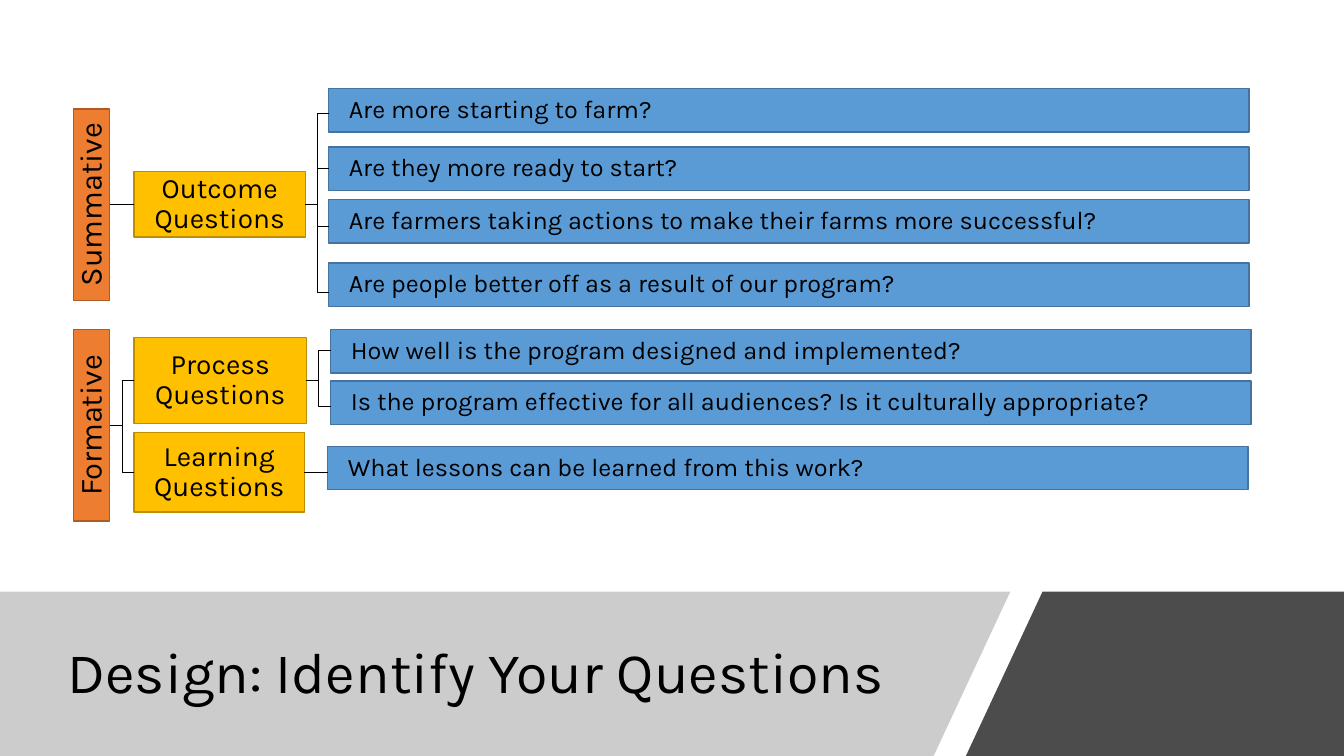
from lxml.etree import SubElement
from pptx import Presentation
from pptx.dml.color import RGBColor
from pptx.enum.shapes import MSO_CONNECTOR as Link, MSO_SHAPE as Shape
from pptx.enum.text import MSO_ANCHOR as Anchor, MSO_AUTO_SIZE as AutoSize, PP_ALIGN as Align
from pptx.oxml.ns import qn
from pptx.util import Inches, Pt

BLACK = RGBColor(0x00, 0x00, 0x00)
GREY = RGBColor(0x80, 0x80, 0x80)
ORANGE = RGBColor(0xED, 0x7D, 0x31)
DARK_ORANGE = RGBColor(0xAF, 0x5C, 0x24)
YELLOW = RGBColor(0xFF, 0xC0, 0x00)
DARK_YELLOW = RGBColor(0xBD, 0x8E, 0x00)
BLUE = RGBColor(0x5B, 0x9B, 0xD5)
DARK_BLUE = RGBColor(0x43, 0x73, 0x9E)

# Grid of square cells: 133.3 columns by 75 rows
CELL = Inches(0.1)
COLUMNS, ROWS = 133.3, 75
STAGE_LEFT, STAGE_WIDTH, STAGE_HEIGHT = 7.3, 3.6, 19
TYPE_LEFT = 13.3
QUESTION_WIDTH, QUESTION_HEIGHT = 91.3, 4.3
BAND_TOP = 58.7

# Stage: name, top, question types
# Type: name, top, width, height, left of its questions, questions
# Question: text, top, row where its link arrives
STAGES = [
    ("Summative", 10.8, [
        ("Outcome Questions", 17, 17, 6.5, 32.6, [
            ("Are more starting to farm?", 8.8, 11.3),
            ("Are they more ready to start?", 14.6, 16.7),
            ("Are farmers taking actions to make their farms more successful?", 19.8, 22.5),
            ("Are people better off as a result of our program?", 26.1, 29),
        ]),
    ]),
    ("Formative", 32.7, [
        ("Process Questions", 33.5, 17.1, 8.5, 32.8, [
            ("How well is the program designed and implemented?", 32.7, 34.8),
            ("Is the program effective for all audiences? Is it culturally appropriate?", 37.8, 40.3),
        ]),
        ("Learning Questions", 42.9, 16.9, 7.9, 32.5, [
            ("What lessons can be learned from this work?", 44.3, 46.8),
        ]),
    ]),
]


def cells(count):
    return round(count * CELL)


class QuestionSlide:
    """Draws on one slide; all lengths are given in grid cells."""

    font = "Karla"

    def __init__(self, deck):
        self.slide = deck.slides.add_slide(deck.slide_layouts[5])
        self.shapes = self.slide.shapes

    def style_text(self, frame, text, size, align, inset):
        frame.text = text
        frame.word_wrap = True
        frame.auto_size = AutoSize.NONE
        frame.vertical_anchor = Anchor.MIDDLE
        frame.margin_left = cells(inset[0])
        frame.margin_top = frame.margin_right = frame.margin_bottom = cells(inset[1])
        para = frame.paragraphs[0]
        para.alignment = align
        para.line_spacing = 0.9
        font = para.runs[0].font
        font.name, font.size = self.font, Pt(size)
        font.color.rgb = BLACK

    def title(self, text, left, top, width, height):
        title = self.shapes.title
        title.left, title.top, title.width, title.height = map(cells, (left, top, width, height))
        self.style_text(title.text_frame, text, 41, Align.LEFT, (1, 0.5))
        title.element.getparent().append(title.element)  # bring in front of the bands

    def band(self, points, color, opacity):
        corners = [(cells(x), cells(y)) for x, y in points]
        builder = self.shapes.build_freeform(*corners[0])
        builder.add_line_segments(corners[1:], close=True)
        band = builder.convert_to_shape()
        band.shadow.inherit = False
        band.fill.solid()
        band.fill.fore_color.rgb = color
        band.line.fill.background()
        tint = band.element.spPr.find(qn("a:solidFill"))[0]
        SubElement(tint, qn("a:alpha")).set("val", str(opacity * 1000))

    def box(self, text, left, top, width, height, fill, line, size,
            align=Align.CENTER, inset=(0.1, 0.1)):
        box = self.shapes.add_shape(Shape.RECTANGLE, *map(cells, (left, top, width, height)))
        box.shadow.inherit = False
        box.fill.solid()
        box.fill.fore_color.rgb = fill
        box.line.color.rgb = line
        box.line.width = Pt(1)
        self.style_text(box.text_frame, text, size, align, inset)
        return box

    def stage(self, text, top):
        """Add a box turned to read upwards, still filling its upright column."""
        shift = (STAGE_HEIGHT - STAGE_WIDTH) / 2
        box = self.box(text, STAGE_LEFT - shift, top + shift, STAGE_HEIGHT, STAGE_WIDTH,
                       ORANGE, DARK_ORANGE, 22, inset=(0.2, 0.2))
        box.rotation = 270

    def question_type(self, text, top, width, height):
        self.box(text, TYPE_LEFT, top, width, height, YELLOW, DARK_YELLOW, 20)

    def question(self, text, left, top):
        self.box(text, left, top, QUESTION_WIDTH, QUESTION_HEIGHT, BLUE, DARK_BLUE, 18,
                 Align.LEFT, (2, 0.1))

    def link(self, x1, y1, x2, y2):
        kind = Link.STRAIGHT if abs(y1 - y2) < 0.1 else Link.ELBOW
        if kind == Link.STRAIGHT:
            y2 = y1
        link = self.shapes.add_connector(kind, *map(cells, (x1, y1, x2, y2)))
        link.line.color.rgb = BLACK
        link.line.width = Pt(0.5)
        SubElement(link.element.spPr, qn("a:effectLst"))


def main():
    deck = Presentation()
    deck.slide_width, deck.slide_height = cells(COLUMNS), cells(ROWS)
    page = QuestionSlide(deck)

    page.band([(0, BAND_TOP), (100.2, BAND_TOP), (92.6, ROWS), (0, ROWS)], GREY, 40)
    page.band([(103.4, BAND_TOP), (COLUMNS, BAND_TOP), (COLUMNS, ROWS), (95.8, ROWS)], BLACK, 70)
    page.title("Design: Identify Your Questions", 5.7, 61, 84.4, 12)

    for stage, stage_top, types in STAGES:
        page.stage(stage, stage_top)
        stage_middle = stage_top + STAGE_HEIGHT / 2
        for name, top, width, height, left, questions in types:
            middle = top + height / 2
            page.question_type(name, top, width, height)
            page.link(STAGE_LEFT + STAGE_WIDTH, stage_middle, TYPE_LEFT, middle)
            for text, question_top, arrival in questions:
                page.question(text, left, question_top)
                page.link(TYPE_LEFT + width, middle, left, arrival)

    deck.save("out.pptx")


if __name__ == "__main__":
    main()
